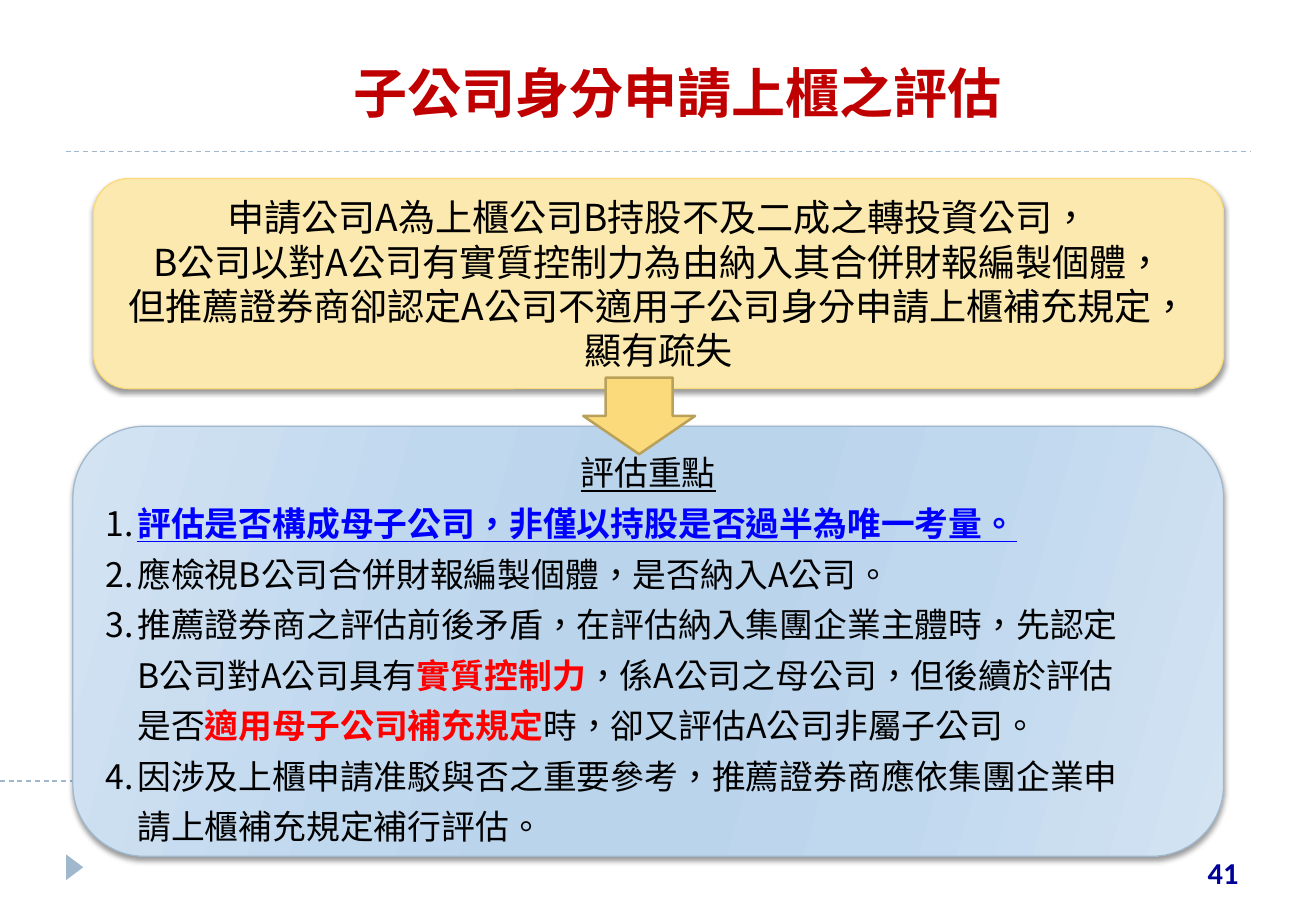
from dataclasses import dataclass

from lxml import etree
from pptx import Presentation
from pptx.dml.color import RGBColor
from pptx.enum import dml, shapes, text
from pptx.oxml import ns
from pptx.util import Inches, Pt


@dataclass(frozen=True)
class Theme:
    font: str = "Noto Sans CJK SC"
    title_font: str = "TeX Gyre Bonum"
    number_font: str = "Calibri"
    title: str = "C00000"
    number: str = "000099"
    ink: str = "000000"
    key: str = "0000FF"
    warning: str = "FF0000"
    rule: str = "9FB8CD"
    case_fill: str = "FCE9AF"
    gold: str = "FADA7A"
    gold_dark: str = "B9A15A"
    gradient: tuple = ((0, "D3E3F2"), (30, "C0D8EE"), (45, "BAD4EC"),
                       (55, "BAD4EC"), (73, "C0D8EE"), (100, "D3E3F2"))
    title_size: int = 32
    case_size: int = 22
    list_size: int = 20
    number_size: int = 18


THEME = Theme()
SHAPE = shapes.MSO_SHAPE
ALIGN = text.PP_ALIGN

CASE = ("申請公司A為上櫃公司B持股不及二成之轉投資公司，",
        "B公司以對A公司有實質控制力為由納入其合併財報編製個體，",
        "但推薦證券商卻認定A公司不適用子公司身分申請上櫃補充規定，",
        "顯有疏失")

KEY = dict(color=THEME.key, bold=True, underline=True)
WARNING = dict(color=THEME.warning, bold=True)
# Each point is a list of (text, format) parts; "\v" breaks the line.
POINTS = (
    [("評估是否構成母子公司，非僅以持股是否過半為唯一考量。", KEY)],
    [("應檢視B公司合併財報編製個體，是否納入A公司。", {})],
    [("推薦證券商之評估前後矛盾，在評估納入集團企業主體時，先認定\vB公司對A公司具有", {}),
     ("實質控制力", WARNING),
     ("，係A公司之母公司，但後續於評估\v是否", {}),
     ("適用母子公司補充規定", WARNING),
     ("時，卻又評估A公司非屬子公司。", {})],
    [("因涉及上櫃申請准駁與否之重要參考，推薦證券商應依集團企業申\v請上櫃補充規定補行評估。", {})],
)


def add_xml(parent, tag, **attributes):
    return etree.SubElement(parent, ns.qn(tag), **attributes)


def format_run(run, size, color=THEME.ink, font=THEME.font, bold=False, underline=False):
    run.font.size = Pt(size)
    run.font.name = font
    run.font.bold = bold
    run.font.underline = underline
    run.font.color.rgb = RGBColor.from_string(color)
    properties = run.font._element
    properties.set("lang", "zh-TW")
    latin = properties.find(ns.qn("a:latin"))
    latin.addnext(properties.makeelement(ns.qn("a:ea"), {"typeface": THEME.font}))


def add_parts(paragraph, parts, size):
    """Add formatted runs, with a line break at each vertical tab."""
    for words, style in parts:
        for index, line in enumerate(words.split("\v")):
            if index:
                paragraph.add_line_break()
            run = paragraph.add_run()
            run.text = line
            format_run(run, size, **style)


def add_rule(slide, left, right, top):
    rule = slide.shapes.add_connector(shapes.MSO_CONNECTOR.STRAIGHT, Inches(left),
                                      Inches(top), Inches(right), Inches(top))
    rule.line.color.rgb = RGBColor.from_string(THEME.rule)
    rule.line.width = Pt(0.75)
    rule.line.dash_style = dml.MSO_LINE.DASH
    add_xml(rule._element.spPr, "a:effectLst")


def add_shape(slide, kind, box, fill, line=None, width=0.75):
    shape = slide.shapes.add_shape(kind, *map(Inches, box))
    shape.shadow.inherit = False
    shape.fill.solid()
    shape.fill.fore_color.rgb = RGBColor.from_string(fill)
    if line:
        shape.line.color.rgb = RGBColor.from_string(line)
        shape.line.width = Pt(width)
    else:
        shape.line.fill.background()
    return shape


def add_panel(slide, box, fill, line):
    """Add a rounded box with a soft shadow below it."""
    panel = add_shape(slide, SHAPE.ROUNDED_RECTANGLE, box, fill, line)
    effects = panel._element.spPr.find(ns.qn("a:effectLst"))
    shadow = add_xml(effects, "a:outerShdw", blurRad=str(Pt(3)), dist=str(Pt(2)),
                     dir="5400000", rotWithShape="0")
    add_xml(add_xml(shadow, "a:srgbClr", val="000000"), "a:alpha", val="40000")
    panel.text_frame.vertical_anchor = text.MSO_ANCHOR.MIDDLE
    return panel


def set_gradient(shape, stops, angle):
    shape.fill.gradient()
    gradient = shape._element.spPr.find(ns.qn("a:gradFill"))
    stop_list = gradient.find(ns.qn("a:gsLst"))
    for stop in list(stop_list):
        stop_list.remove(stop)
    for position, color in stops:
        stop = add_xml(stop_list, "a:gs", pos=str(position * 1000))
        add_xml(stop, "a:srgbClr", val=color)
    gradient.find(ns.qn("a:lin")).set("ang", str(angle * 60000))


def set_hanging_number(paragraph, margin, tab):
    """Hang the number left of the margin; the first line's text starts at the tab."""
    properties = paragraph._element.get_or_add_pPr()
    properties.set("marL", str(Inches(margin)))
    properties.set("indent", str(-Inches(margin)))
    tabs = add_xml(properties, "a:tabLst")
    add_xml(tabs, "a:tab", pos=str(Inches(tab)), algn="l")


def add_title(slide, words):
    title = slide.shapes.title
    title.left, title.top, title.width, title.height = map(Inches, (0.69, 0.36, 9.77, 0.79))
    title.text_frame.text = words
    title.text_frame.vertical_anchor = text.MSO_ANCHOR.MIDDLE
    paragraph = title.text_frame.paragraphs[0]
    paragraph.alignment = ALIGN.CENTER
    format_run(paragraph.runs[0], THEME.title_size, THEME.title, THEME.title_font, bold=True)


def add_page_number(slide, number):
    box = slide.shapes.add_textbox(*map(Inches, (7.94, 6.98, 2.35, 0.4)))
    box.text_frame.word_wrap = True
    box.text_frame.text = number
    paragraph = box.text_frame.paragraphs[0]
    paragraph.alignment = ALIGN.RIGHT
    format_run(paragraph.runs[0], THEME.number_size, THEME.number, THEME.number_font, bold=True)


def add_case(slide):
    panel = add_panel(slide, (0.77, 1.47, 9.3, 1.73), THEME.case_fill, THEME.gold)
    panel.text_frame.word_wrap = False
    paragraph = panel.text_frame.paragraphs[0]
    paragraph.alignment = ALIGN.CENTER
    paragraph.line_spacing = Pt(26.2)
    add_parts(paragraph, [("\v".join(CASE), {})], THEME.case_size)


def add_points(slide):
    panel = add_panel(slide, (0.6, 3.51, 9.47, 3.54), THEME.gradient[0][1], THEME.rule)
    set_gradient(panel, THEME.gradient, 16)
    frame = panel.text_frame
    frame.word_wrap = True
    frame.margin_top = Inches(0.1)
    heading = frame.paragraphs[0]
    heading.alignment = ALIGN.CENTER
    heading.line_spacing = Pt(30)
    add_parts(heading, [("評估重點", dict(underline=True))], THEME.list_size)
    for number, parts in enumerate(POINTS, 1):
        paragraph = frame.add_paragraph()
        paragraph.alignment = ALIGN.LEFT
        paragraph.line_spacing = Pt(30)
        set_hanging_number(paragraph, 0.26, 0.42)
        add_parts(paragraph, [(f"{number}.\t", {}), *parts], THEME.list_size)


def main():
    presentation = Presentation()
    presentation.slide_width, presentation.slide_height = Inches(10.83), Inches(7.5)
    slide = presentation.slides.add_slide(presentation.slide_layouts[5])
    add_rule(slide, 0, 0.6, 6.43)
    add_rule(slide, 0.54, 10.29, 1.25)
    marker = add_shape(slide, SHAPE.ISOSCELES_TRIANGLE, (0.51, 7.07, 0.21, 0.14), THEME.rule)
    marker.rotation = 90
    add_title(slide, "子公司身分申請上櫃之評估")
    add_page_number(slide, "41")
    add_case(slide)
    add_points(slide)
    arrow = add_shape(slide, SHAPE.DOWN_ARROW, (4.8, 3.11, 0.92, 0.63),
                      THEME.gold, THEME.gold_dark, 1.5)
    arrow.adjustments[0] = 0.6
    presentation.save("out.pptx")


if __name__ == "__main__":
    main()
